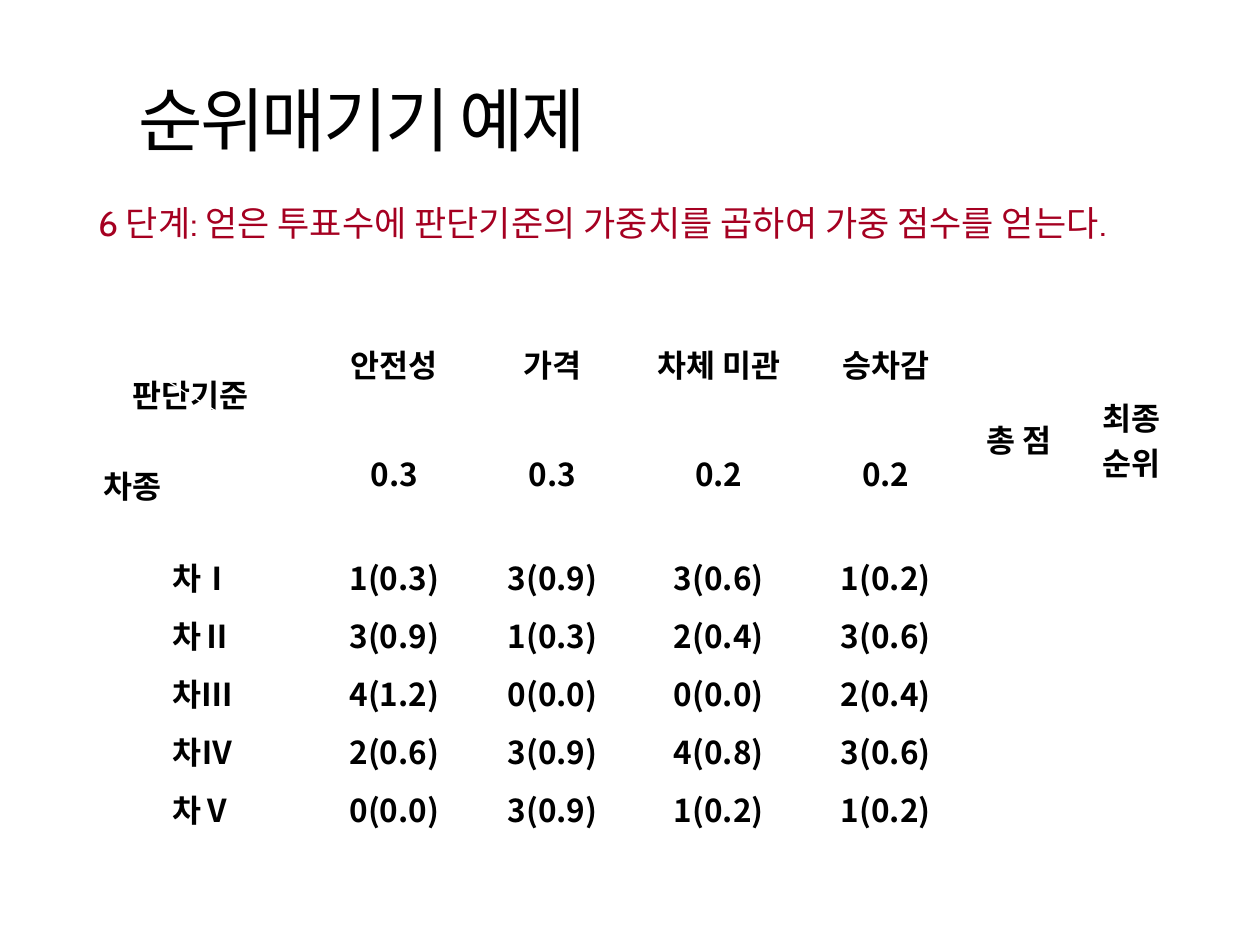
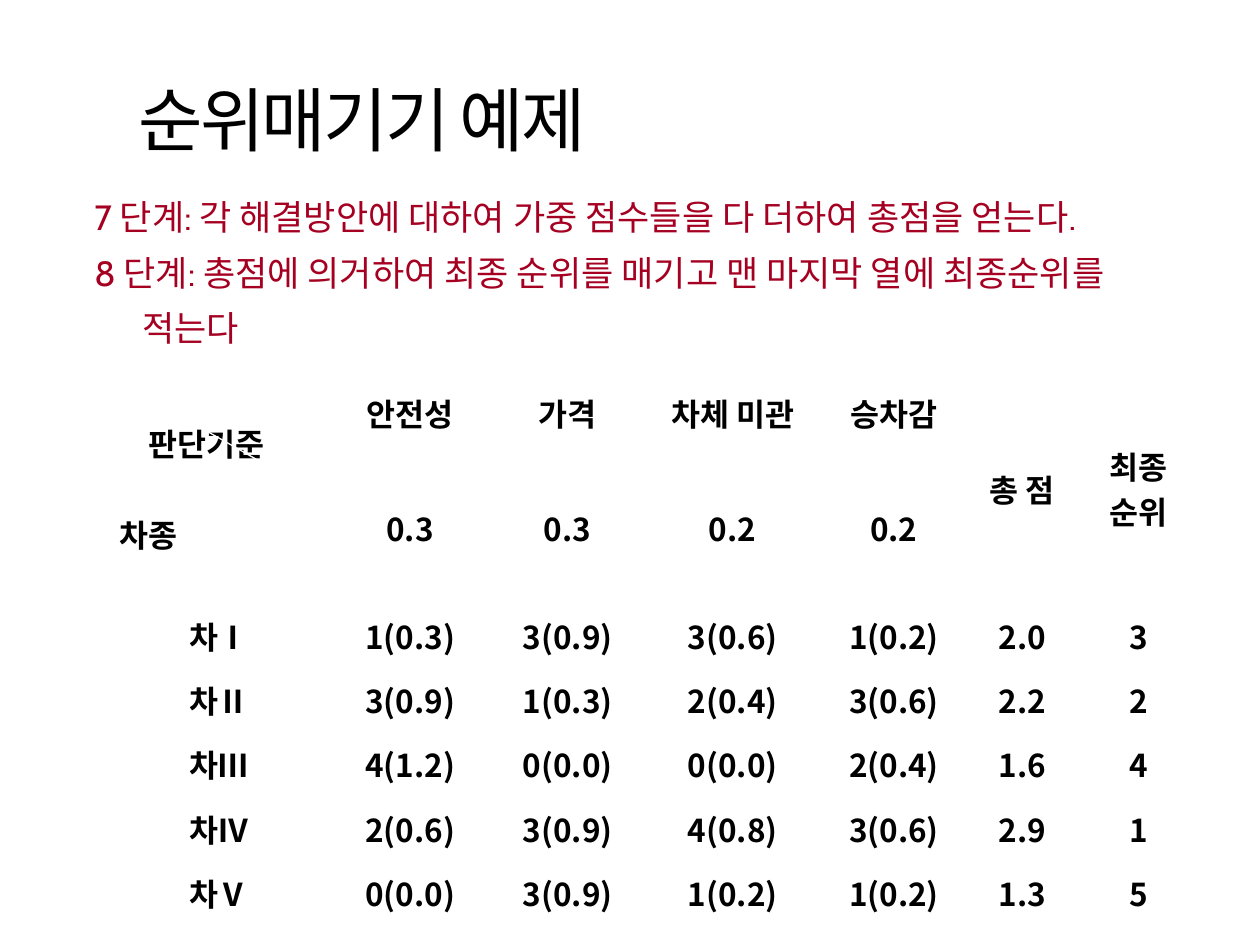
from pptx import Presentation
from pptx.dml.color import RGBColor
from pptx.enum.shapes import MSO_CONNECTOR
from pptx.enum.text import MSO_ANCHOR, PP_ALIGN
from pptx.oxml.ns import qn
from pptx.util import Pt
from lxml.etree import SubElement

PX = 9144  # 100 px to the inch
SANS = "Noto Sans CJK KR"
BLACK, WHITE, RED = "000000", "FFFFFF", "A50021"
LEFT, MID, JUST = PP_ALIGN.LEFT, PP_ALIGN.CENTER, PP_ALIGN.JUSTIFY
NO_STYLE = "{2D5ABB26-0587-4C30-8999-92F81FD0307C}"


def color(code):
    return RGBColor.from_string(code)


def write(para, text, size, tint, face=SANS, bold=False, **form):
    """Put one run in a paragraph; form holds paragraph settings."""
    for key, val in form.items():
        setattr(para, key, val)
    run = para.add_run()
    run.text = text
    for key, val in dict(size=Pt(size), name=face, bold=bold).items():
        setattr(run.font, key, val)
    run.font.color.rgb = color(tint)
    props = run.font._element
    props.set("kern", "0")
    SubElement(props, qn("a:ea")).set("typeface", SANS)
    return props


# Votes per car and weight per criterion
goals = ["안전성", "가격", "차체 미관", "승차감"]
weights = [0.3, 0.3, 0.2, 0.2]
votes = {
    "차Ⅰ": [1, 3, 3, 1],
    "차Ⅱ": [3, 1, 2, 3],
    "차Ⅲ": [4, 0, 0, 2],
    "차Ⅳ": [2, 3, 4, 3],
    "차Ⅴ": [0, 3, 1, 1],
}
sums = {car: sum(v * w for v, w in zip(row, weights)) for car, row in votes.items()}
order = sorted(sums, key=sums.get, reverse=True)

# What differs from slide to slide; each step is text and line spacing
pages = [
    dict(
        steps=[("6 단계: 얻은 투표수에 판단기준의 가중치를 곱하여 가중 점수를 얻는다.", 1.16)],
        body=(61, 150, 872, 517), align=JUST, grid=(72, 262),
        cols=[178, 126, 125, 139, 126, 86, 92], rows=[53, 120] + [46] * 5,
        slash=(75, 267, 251, 375), final=False,
    ),
    dict(
        steps=[
            ("7 단계: 각 해결방안에 대하여 가중 점수들을 다 더하여 총점을 얻는다.", 1.0),
            ("8 단계: 총점에 의거하여 최종 순위를 매기고 맨 마지막 열에 최종순위를 적는다", 1.33),
        ],
        body=(58, 150, 881, 517), align=LEFT, grid=(85, 296),
        cols=[178, 125, 125, 137, 119, 85, 100], rows=[63, 120] + [51] * 5,
        slash=(83, 296, 264, 399), final=True,
    ),
]

deck = Presentation()
deck.slide_width, deck.slide_height = 1000 * PX, 750 * PX

for page in pages:
    slide = deck.slides.add_slide(deck.slide_layouts[6])

    # Title
    frame = slide.shapes.add_textbox(100 * PX, 56 * PX, 850 * PX, 100 * PX).text_frame
    frame.word_wrap = True
    props = write(frame.paragraphs[0], "순위매기기 예제", 40, BLACK)
    props.set("spc", "-150")

    # Steps with a hanging indent
    frame = slide.shapes.add_textbox(*[n * PX for n in page["body"]]).text_frame
    frame.word_wrap = True
    for i, (text, gap) in enumerate(page["steps"]):
        para = frame.add_paragraph() if i else frame.paragraphs[0]
        ppr = para._p.get_or_add_pPr()
        ppr.set("marL", str(45 * PX))
        ppr.set("indent", str(-38 * PX))
        write(para, text, 20, RED, "Cabin", alignment=page["align"], line_spacing=gap)

    # Table frame
    cols, rows = page["cols"], page["rows"]
    x, y = page["grid"]
    table = slide.shapes.add_table(
        len(rows), len(cols), x * PX, y * PX, sum(cols) * PX, sum(rows) * PX
    ).table
    table.first_row = table.horz_banding = False
    table._tbl.tblPr.find(qn("a:tableStyleId")).text = NO_STYLE
    for col, wide in zip(table.columns, cols):
        col.width = wide * PX
    for row, high in zip(table.rows, rows):
        row.height = high * PX
    for c in (0, 5, 6):
        table.cell(0, c).merge(table.cell(1, c))

    # Table text
    grid = [[""] + goals + ["총 점", "최종\n순위"], [""] + [str(w) for w in weights]]
    for car, row in votes.items():
        line = [car] + [f"{v}({v * w:.1f})" for v, w in zip(row, weights)]
        if page["final"]:
            line += [f"{sums[car]:.1f}", str(order.index(car) + 1)]
        grid.append(line)
    for cell in table.iter_cells():
        cell.fill.background()
        cell.vertical_anchor = MSO_ANCHOR.MIDDLE
    for r, line in enumerate(grid):
        for c, text in enumerate(line):
            frame = table.cell(r, c).text_frame
            for i, part in enumerate(text.split("\n") if text else []):
                para = frame.add_paragraph() if i else frame.paragraphs[0]
                write(para, part, 18, BLACK, bold=True, alignment=MID)

    # Corner cell: criteria above, cars below
    frame = table.cell(0, 0).text_frame
    top, low = frame.paragraphs[0], frame.add_paragraph()
    top._p.get_or_add_pPr().set("marL", str(23 * PX))
    write(top, "판단기준", 18, BLACK, bold=True, alignment=JUST)
    write(low, "차종", 18, BLACK, bold=True, alignment=JUST, space_before=Pt(26))

    # Slash across the corner cell
    slash = slide.shapes.add_connector(
        MSO_CONNECTOR.STRAIGHT, *[n * PX for n in page["slash"]]
    )
    slash.line.color.rgb = color(WHITE)
    slash.line.width = Pt(0.75)
    SubElement(slash._element.spPr, qn("a:effectLst"))

deck.save("out.pptx")
